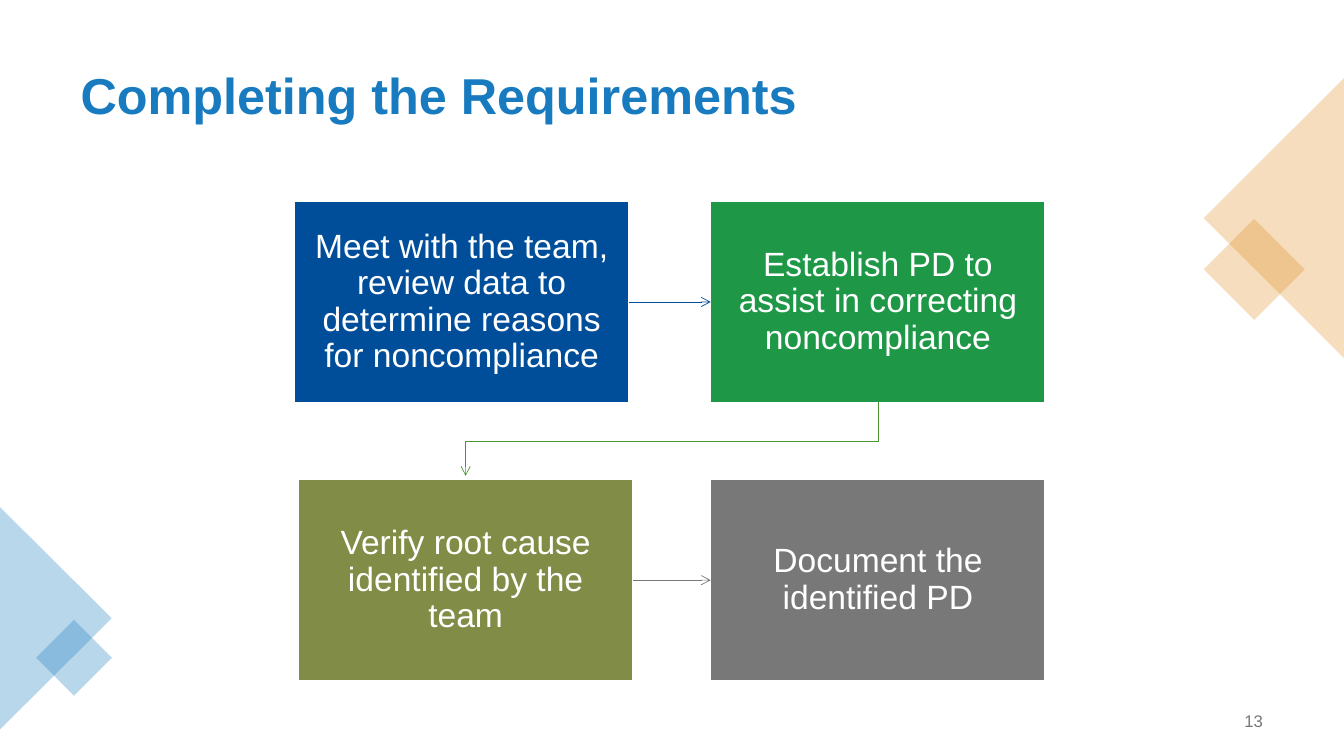
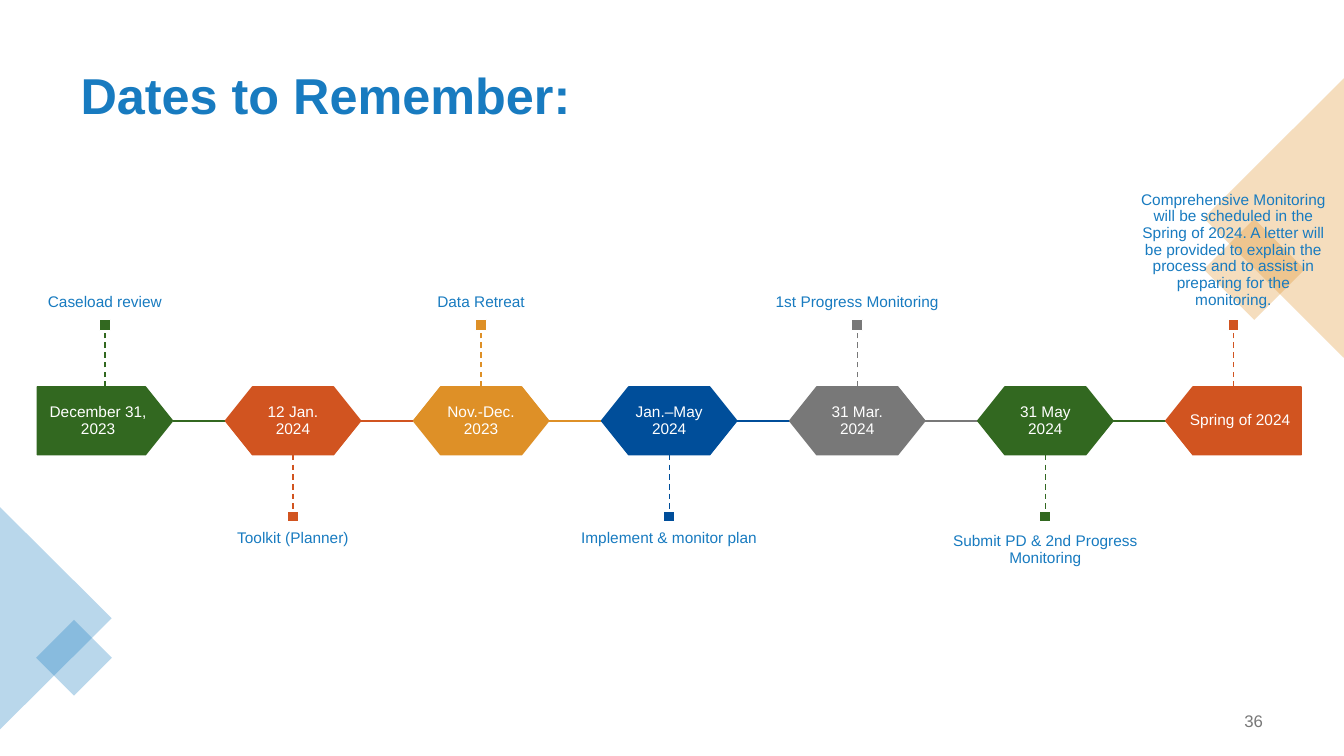
from lxml import etree
from pptx import Presentation
from pptx.dml.color import RGBColor
from pptx.enum.dml import MSO_LINE
from pptx.enum.shapes import MSO_CONNECTOR, MSO_SHAPE
from pptx.enum.text import MSO_ANCHOR, PP_ALIGN
from pptx.oxml.ns import qn
from pptx.util import Cm, Pt

FONT = "Arial"
COLORS = {
    "title": "187BC0", "white": "FFFFFF", "gray": "787878", "navy": "004E9A",
    "green": "1E9847", "leaf": "4A9431", "olive": "818D46",
    "forest": "326820", "rust": "D15420", "amber": "DE9027",
}

# Content
REQUIREMENTS = {
    "title": "Completing the Requirements",
    "page": "13",
    # text, color, left, top
    "steps": [
        ("Meet with the team, review data to determine reasons for noncompliance",
         "navy", 7.42, 5.08),
        ("Establish PD to assist in correcting noncompliance", "green", 17.91, 5.08),
        ("Verify root cause identified by the team", "olive", 7.52, 12.09),
        ("Document the identified PD", "gray", 17.91, 12.09),
    ],
}
DATES = {
    "title": "Dates to Remember:",
    "page": "36",
    # date, event, color
    "events": [
        ("December 31, 2023", "Caseload review", "forest"),
        ("12 Jan. 2024", "Toolkit (Planner)", "rust"),
        ("Nov.-Dec. 2023", "Data Retreat", "amber"),
        ("Jan.–May 2024", "Implement & monitor plan", "navy"),
        ("31 Mar. 2024", "1st Progress Monitoring", "gray"),
        ("31 May 2024", "Submit PD & 2nd Progress Monitoring", "forest"),
        ("Spring of 2024",
         "Comprehensive Monitoring will be scheduled in the Spring of 2024. "
         "A letter will be provided to explain the process and to assist in "
         "preparing for the monitoring.", "rust"),
    ],
}
# Corner decoration: shape, color, left, top, width, height, rotation
DECOR = [
    (MSO_SHAPE.RECTANGLE, "amber", 30.71, 5.89, 1.8, 1.8, 45),
    (MSO_SHAPE.ISOSCELES_TRIANGLE, "amber", 28.58, 3.73, 7.04, 3.53, 270),
    (MSO_SHAPE.ISOSCELES_TRIANGLE, "title", -1.4, 14.17, 5.61, 2.82, 90),
    (MSO_SHAPE.RECTANGLE, "title", 1.19, 15.9, 1.35, 1.35, 45),
]


def rgb(name):
    return RGBColor.from_string(COLORS[name])


def write(sp, text, size, color, align=PP_ALIGN.CENTER, anchor=MSO_ANCHOR.MIDDLE,
          inset=(0.25, 0.13), bold=False, spacing=0.9):
    tf = sp.text_frame
    tf.word_wrap = True
    tf.vertical_anchor = anchor
    tf.margin_left = tf.margin_right = Cm(inset[0])
    tf.margin_top = tf.margin_bottom = Cm(inset[1])
    p = tf.paragraphs[0]
    p.text = text
    p.alignment = align
    p.line_spacing = spacing
    p.font.name, p.font.size, p.font.bold = FONT, Pt(size), bold
    p.font.color.rgb = rgb(color)


def add_text(s, left, top, width, height, *args, **kwargs):
    sp = s.shapes.add_textbox(Cm(left), Cm(top), Cm(width), Cm(height))
    write(sp, *args, **kwargs)


def add_block(s, kind, left, top, width, height, fill, line=None):
    sp = s.shapes.add_shape(kind, Cm(left), Cm(top), Cm(width), Cm(height))
    sp.shadow.inherit = False
    sp.fill.solid()
    sp.fill.fore_color.rgb = rgb(fill)
    if line:
        sp.line.color.rgb = rgb(line)
        sp.line.width = Pt(1)
    else:
        sp.line.fill.background()
    return sp


def add_line(s, x1, y1, x2, y2, color, width=1):
    line = s.shapes.add_connector(MSO_CONNECTOR.STRAIGHT, Cm(x1), Cm(y1), Cm(x2), Cm(y2))
    line.line.color.rgb = rgb(color)
    line.line.width = Pt(width)
    etree.SubElement(line.element.spPr, qn("a:effectLst"))
    return line


def add_arrowhead(sp):
    ln = sp.element.spPr.find(qn("a:ln"))
    etree.SubElement(ln, qn("a:tailEnd"), type="arrow")


def add_base(prs, content):
    """Blank slide with the shared title, corner decoration and page number."""
    s = prs.slides.add_slide(prs.slide_layouts[6])
    for kind, color, left, top, width, height, rotation in DECOR:
        sp = add_block(s, kind, left, top, width, height, color)
        sp.rotation = rotation
        fill = sp.element.spPr.find(qn("a:solidFill"))
        etree.SubElement(fill[0], qn("a:alpha"), val="30000")
    add_text(s, 1.78, 0.89, 30.3, 3.15, content["title"], 36, "title",
             align=PP_ALIGN.LEFT, bold=True)
    add_text(s, 24.46, 17.65, 7.62, 1.02, content["page"], 12, "gray",
             align=PP_ALIGN.RIGHT, spacing=1.0)
    return s


def build_requirements(prs):
    s = add_base(prs, REQUIREMENTS)
    width, height = 8.43, 5.06
    boxes = []
    for text, color, left, top in REQUIREMENTS["steps"]:
        box = add_block(s, MSO_SHAPE.RECTANGLE, left, top, width, height, color, "white")
        write(box, text, 24, "white", inset=(0.41, 0.43))
        boxes.append(box)

    # Arrows along each row
    for start, end, color in [(0, 1, "navy"), (2, 3, "gray")]:
        arrow = add_line(s, 0, 0, 1, 1, color, 0.5)
        arrow.begin_connect(boxes[start], 3)
        arrow.end_connect(boxes[end], 1)
        add_arrowhead(arrow)

    # Bent arrow from the first row to the second
    source, target = boxes[1], boxes[2]
    x1, y1 = source.left + source.width // 2, source.top + source.height
    x2, y2 = target.left + target.width // 2, target.top - Cm(0.1)
    middle = (y1 + target.top) // 2
    builder = s.shapes.build_freeform(x1, y1)
    builder.add_line_segments([(x1, middle), (x2, middle), (x2, y2)], close=False)
    bend = builder.convert_to_shape()
    bend.shadow.inherit = False
    bend.fill.background()
    bend.line.color.rgb = rgb("leaf")
    bend.line.width = Pt(0.5)
    add_arrowhead(bend)


def build_dates(prs):
    s = add_base(prs, DATES)
    left0, top, width, height, pitch = 0.94, 9.75, 3.41, 1.71, 4.74
    stem, dot, label_height = 1.42, 0.28, 4.57
    last = len(DATES["events"]) - 1
    for i, (date, event, color) in enumerate(DATES["events"]):
        left = left0 + i * pitch
        center = left + width / 2
        above = i % 2 == 0

        # Date marker, with flat outer ends on the first and last
        kind = MSO_SHAPE.PENTAGON if i in (0, last) else MSO_SHAPE.HEXAGON
        marker = add_block(s, kind, left, top, width, height, color, color)
        marker.adjustments[0] = 0.4
        if i == last:
            marker.element.spPr.find(qn("a:xfrm")).set("flipH", "1")
        write(marker, date, 11, "white", inset=(0.23, 0.23))
        if i < last:
            axis = top + height / 2
            add_line(s, left + width, axis, left + pitch, axis, color)

        # Stem, dot and label, alternating above and below
        if above:
            edge, dot_top = top, top - stem - dot
            label_top, side, anchor = dot_top - label_height, 2, MSO_ANCHOR.BOTTOM
        else:
            edge, dot_top = top + height, top + height + stem
            label_top, side, anchor = dot_top + dot, 0, MSO_ANCHOR.TOP
        square = add_block(s, MSO_SHAPE.RECTANGLE, center - dot / 2, dot_top,
                           dot, dot, color, "white")
        line = add_line(s, center, edge, center, dot_top, color)
        line.line.dash_style = MSO_LINE.DASH
        line.end_connect(square, side)
        add_text(s, center - pitch / 2, label_top, pitch, label_height, event, 11,
                 "title", anchor=anchor, inset=(0, 0.28))


def main():
    prs = Presentation()
    prs.slide_width, prs.slide_height = Cm(33.87), Cm(19.05)
    build_requirements(prs)
    build_dates(prs)
    prs.save("out.pptx")


if __name__ == "__main__":
    main()
